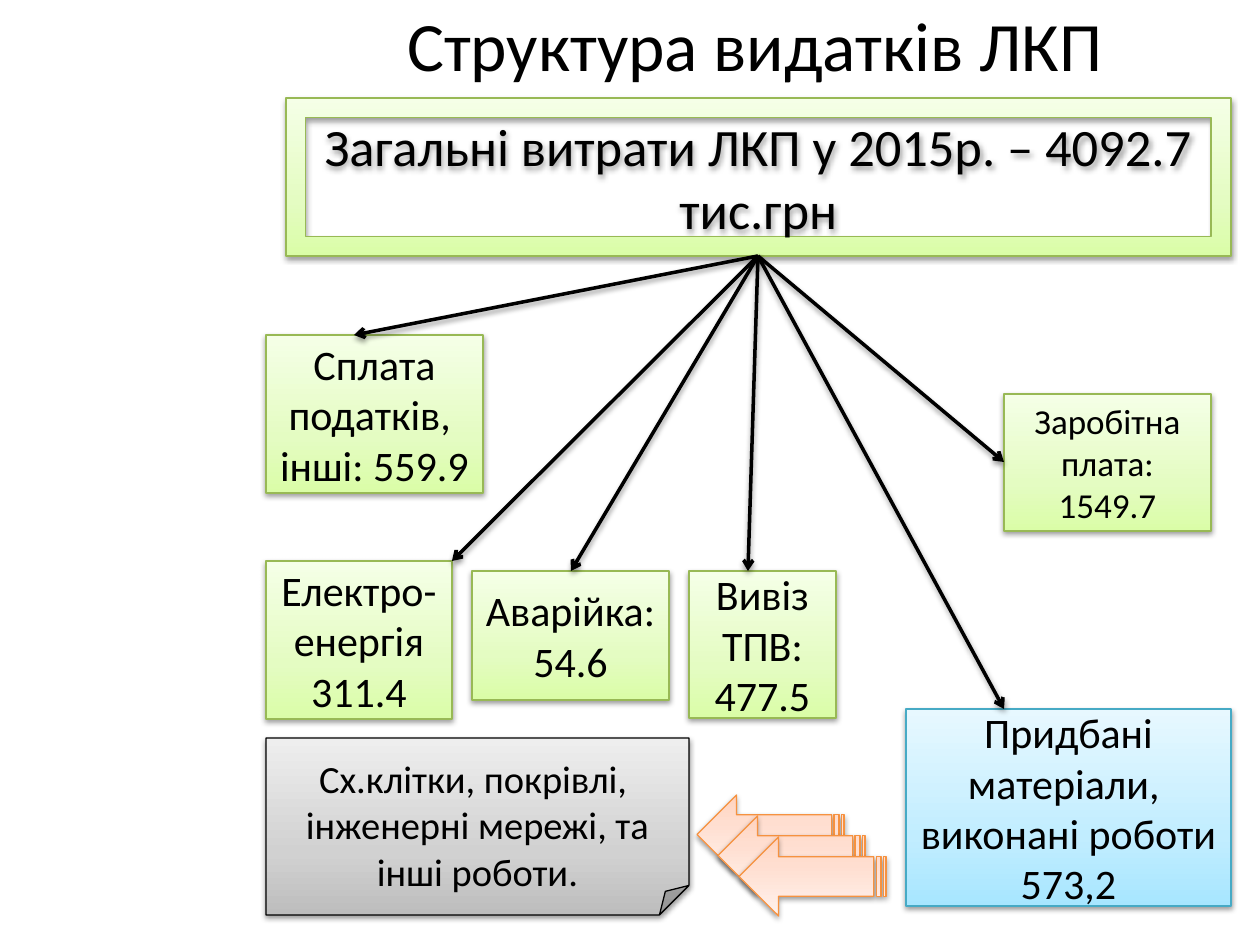
from dataclasses import dataclass

from lxml import etree
from pptx import Presentation
from pptx.dml.color import RGBColor
from pptx.enum.shapes import MSO_CONNECTOR, MSO_SHAPE
from pptx.enum.text import MSO_ANCHOR, PP_ALIGN
from pptx.oxml.ns import qn
from pptx.util import Emu, Pt

RECT = MSO_SHAPE.RECTANGLE
FRAME = MSO_SHAPE.FRAME
NOTE = MSO_SHAPE.FOLDED_CORNER
ARROW = MSO_SHAPE.STRIPED_RIGHT_ARROW
STRAIGHT = MSO_CONNECTOR.STRAIGHT
CENTER = PP_ALIGN.CENTER
MIDDLE = MSO_ANCHOR.MIDDLE

FONT = "Calibri"
PX_PER_INCH = 126
COLORS = {
    "text": "000000",
    "green": ("DAFDA7", "E4FCC2", "F5FFE7", "98B955"),
    "blue": ("A7E6FF", "C1EDFF", "E7F8FF", "46AAC5"),
    "orange": ("FFD2BD", "FFDED0", "FFF2ED", "F69240"),
    "gray": ("BDBDBD", "D1D1D1", "EEEEEE", "000000"),
}
STOPS = (0, 35, 100)


@dataclass
class Box:
    x: int
    y: int
    w: int
    h: int
    text: str = ""
    size: int = 24
    color: str = "green"
    kind: int = RECT
    top: int = 6
    rotation: int = 0


def px(n: int) -> Emu:
    return Emu(round(n * 914400 / PX_PER_INCH))


def rgb(value: str) -> RGBColor:
    return RGBColor.from_string(value)


def add_shadow(sp) -> None:
    effects = etree.SubElement(sp._element.spPr, qn("a:effectLst"))
    shadow = etree.SubElement(effects, qn("a:outerShdw"), blurRad="40000",
                              dist="20000", dir="5400000", rotWithShape="0")
    color = etree.SubElement(shadow, qn("a:srgbClr"), val=COLORS["text"])
    etree.SubElement(color, qn("a:alpha"), val="38000")


def set_gradient(sp, colors: tuple) -> None:
    sp.fill.gradient()
    sp.fill.gradient_angle = 90
    stops = sp._element.spPr.find(qn("a:gradFill")).find(qn("a:gsLst"))
    for old in list(stops):
        stops.remove(old)
    for pos, value in zip(STOPS, colors):
        stop = etree.SubElement(stops, qn("a:gs"), pos=str(pos * 1000))
        etree.SubElement(stop, qn("a:srgbClr"), val=value)


def set_text(sp, text: str, size: float) -> None:
    tf = sp.text_frame
    tf.word_wrap = True
    tf.vertical_anchor = MIDDLE
    tf.text = text
    for p in tf.paragraphs:
        p.alignment = CENTER
        for r in p.runs:
            r.font.name = FONT
            r.font.size = Pt(size)
            r.font.color.rgb = rgb(COLORS["text"])


def draw_box(s, box: Box) -> None:
    sp = s.shapes.add_shape(box.kind, px(box.x), px(box.y), px(box.w), px(box.h))
    sp.rotation = box.rotation
    *fill, line = COLORS[box.color]
    set_gradient(sp, fill)
    sp.fill.gradient_angle = 270 if sp.fill.gradient_angle == 270 else 90
    sp._element.spPr.find(qn("a:gradFill")).find(qn("a:lin")).set("ang", "16200000")
    sp.line.color.rgb = rgb(line)
    sp.line.width = Pt(0.75)
    add_shadow(sp)
    if box.text:
        set_text(sp, box.text, box.size)
        sp.text_frame.margin_top = px(box.top)


def draw_link(s, start: tuple, end: tuple) -> None:
    sp = s.shapes.add_connector(STRAIGHT, *map(px, start + end))
    sp.line.color.rgb = rgb(COLORS["text"])
    sp.line.width = Pt(2)
    ln = sp._element.spPr.find(qn("a:ln"))
    etree.SubElement(ln, qn("a:tailEnd"), type="arrow")
    add_shadow(sp)


TOTAL = Box(286, 98, 945, 158, "Загальні витрати ЛКП у 2015р. – 4092.7 тис.грн", 30, kind=FRAME)
EXPENSES = [
    Box(266, 335, 217, 158, "Сплата податків, \nінші: 559.9"),
    Box(266, 561, 186, 158, "Електро-енергія 311.4"),
    Box(472, 571, 197, 129, "Аварійка: 54.6"),
    Box(689, 571, 147, 147, "Вивіз ТПВ: 477.5"),
    Box(906, 709, 325, 197, "Придбані матеріали, \nвиконані роботи 573,2", color="blue"),
    Box(1004, 394, 207, 137, "Заробітна плата:\v1549.7", 20),
]
HUB = (758, 256)
LINK_ENDS = [(354, 335), (452, 561), (571, 571), (748, 571), (1004, 709), (1004, 462)]
BLOCK_ARROWS = [Box(697 + 21 * i, 795 + 21 * i, 147, 79, color="orange", kind=ARROW, rotation=180)
                for i in range(3)]
WORKS = Box(266, 738, 423, 177, "Сх.клітки, покрівлі, \nінженерні мережі, та інші роботи.",
            22, "gray", NOTE, top=32)


def main() -> None:
    prs = Presentation()
    prs.slide_width, prs.slide_height = px(1260), px(945)
    s = prs.slides.add_slide(prs.slide_layouts[6])
    title = s.shapes.add_textbox(px(253), px(0), px(1004), px(88))
    set_text(title, "Структура видатків ЛКП", 39.6)
    for box in [TOTAL, *EXPENSES]:
        draw_box(s, box)
    for end in LINK_ENDS:
        draw_link(s, HUB, end)
    for box in [*BLOCK_ARROWS, WORKS]:
        draw_box(s, box)
    prs.save("out.pptx")


if __name__ == "__main__":
    main()
